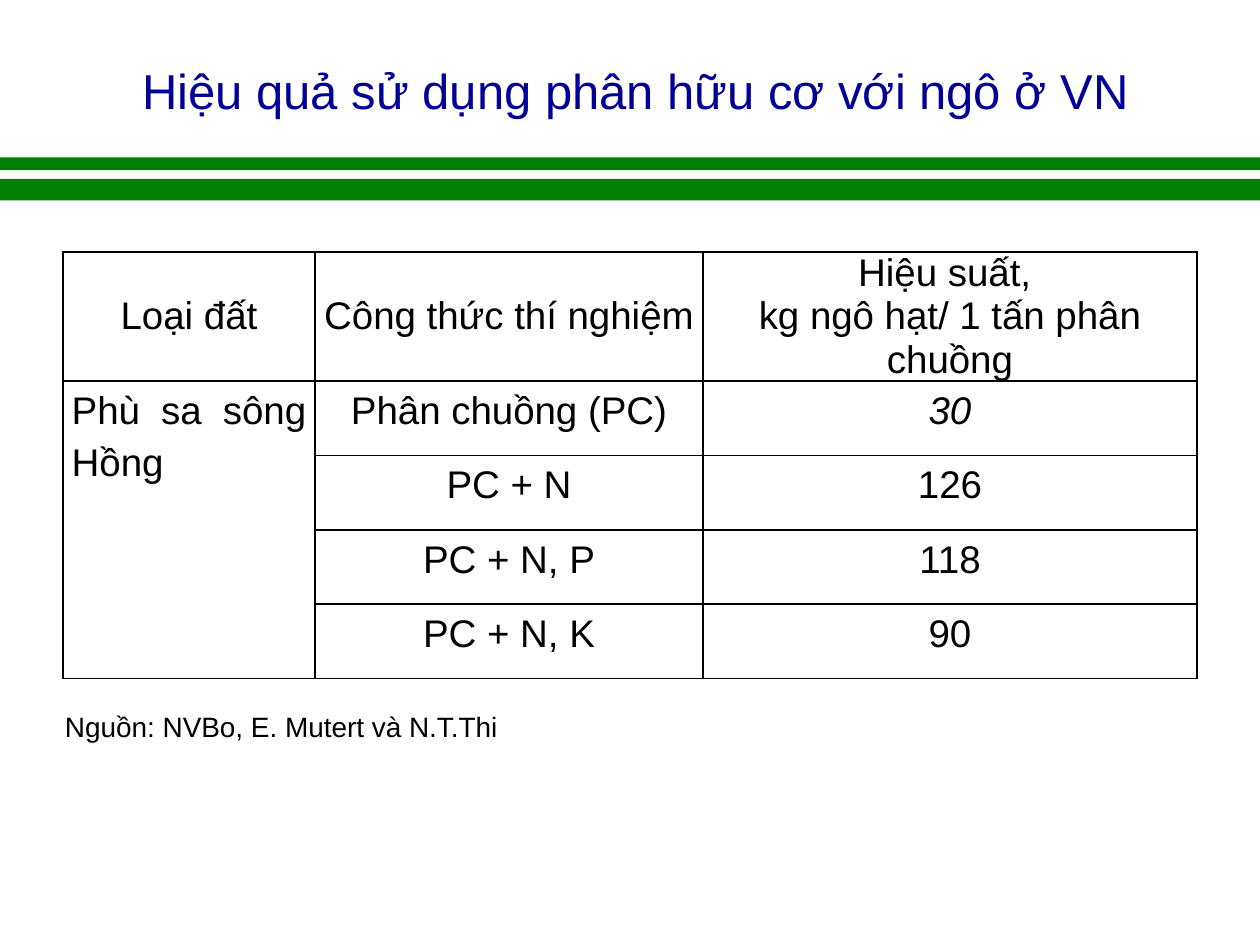
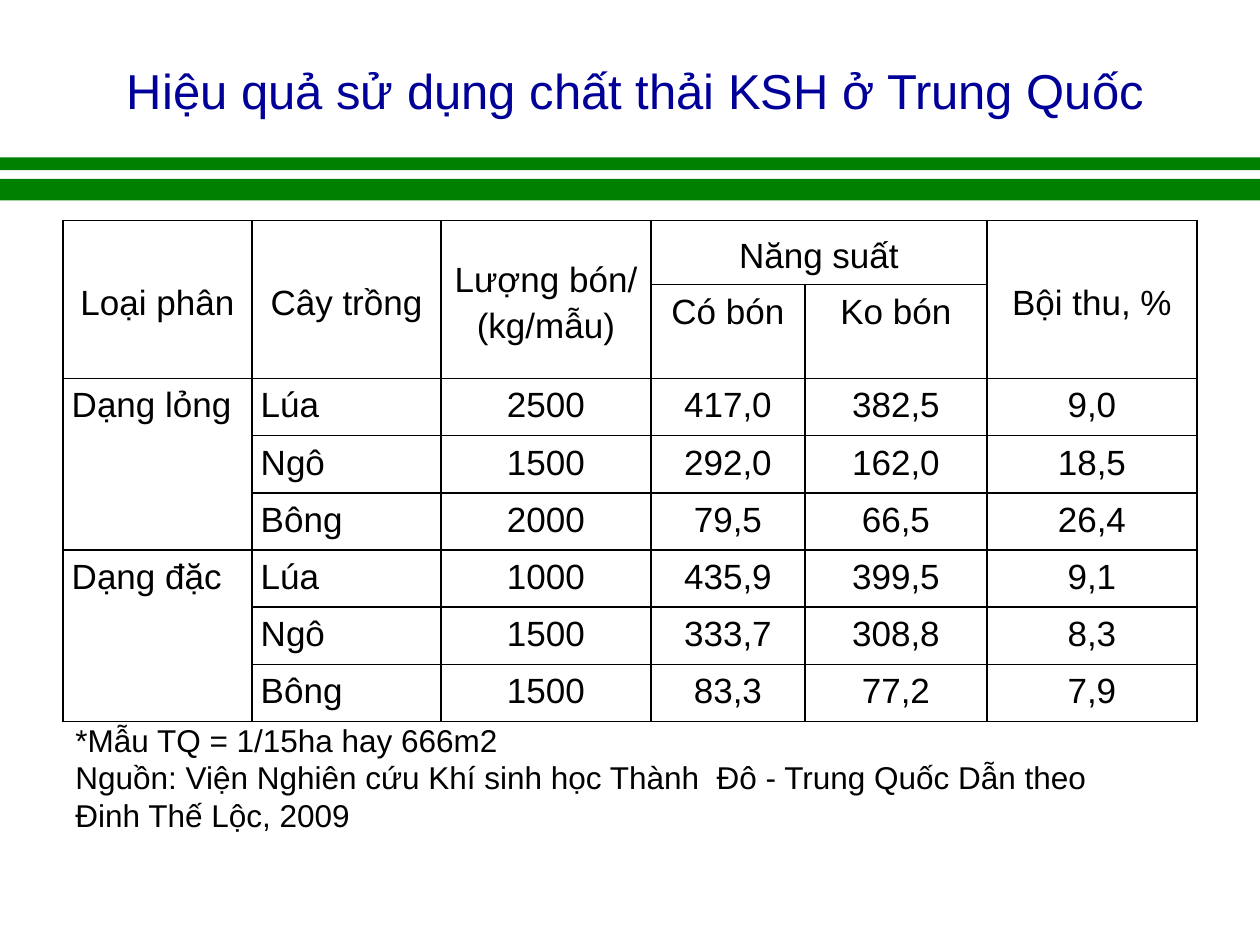
from dataclasses import dataclass

from lxml import etree
from pptx import Presentation
from pptx.dml.color import RGBColor
from pptx.enum.shapes import MSO_SHAPE
from pptx.enum.text import MSO_ANCHOR, MSO_AUTO_SIZE, PP_ALIGN
from pptx.oxml.ns import qn
from pptx.util import Pt

RECTANGLE = MSO_SHAPE.RECTANGLE
TOP, MIDDLE, BOTTOM = MSO_ANCHOR.TOP, MSO_ANCHOR.MIDDLE, MSO_ANCHOR.BOTTOM
LEFT, CENTER, JUSTIFY = PP_ALIGN.LEFT, PP_ALIGN.CENTER, PP_ALIGN.JUSTIFY
FIT_SHAPE = MSO_AUTO_SIZE.SHAPE_TO_FIT_TEXT


@dataclass(frozen=True)
class Theme:
    font: str = "Arial"
    title_color: RGBColor = RGBColor(0x00, 0x00, 0x99)
    text_color: RGBColor = RGBColor(0x00, 0x00, 0x00)
    band_color: RGBColor = RGBColor(0x00, 0x80, 0x00)
    border_color: str = "000000"
    title_size: int = 28


THEME = Theme()
BANDS = [(90, 7.2), (102.24, 12.24)]  # top, height
CELL_MARGINS = {"margin_left": Pt(5), "margin_right": Pt(5), "margin_top": 0, "margin_bottom": 0}
TIGHT = {}
AIRY = {"line_spacing": 1.2, "space_before": Pt(3), "space_after": Pt(3)}

# Merges are (first row, first column, last row, last column).
PAGES = [
    {
        "title": "Hiệu quả sử dụng phân hữu cơ với ngô ở VN",
        "table_top": 144,
        "columns": [144, 221.76, 282.24],
        "row_heights": [66.24] + [42.48] * 4,
        "rows": [
            ["Loại đất", "Công thức thí nghiệm", "Hiệu suất, \nkg ngô hạt/ 1 tấn phân chuồng"],
            ["Phù sa sông Hồng", "Phân chuồng (PC)", "30"],
            [None, "PC + N", "126"],
            [None, "PC + N, P", "118"],
            [None, "PC + N, K", "90"],
        ],
        "merges": [(1, 0, 4, 0)],
        "label_columns": 1,
        "italic_cells": {(1, 2)},
        "heading_format": TIGHT,
        "table_size": 22,
        "note": "Nguồn: NVBo, E. Mutert và N.T.Thi",
        "note_area": (30, 401.76, 306, 26.64),
        "note_size": 16,
    },
    {
        "title": "Hiệu quả sử dụng chất thải KSH ở Trung Quốc",
        "table_top": 126,
        "columns": [108, 108, 120, 88, 104, 120],
        "row_heights": [36.72] * 2 + [32.7] * 6,
        "rows": [
            ["Loại phân", "Cây trồng", "Lượng bón/ (kg/mẫu)", "Năng suất", None, "Bội thu, %"],
            [None, None, None, "Có bón", "Ko bón", None],
            ["Dạng lỏng", "Lúa", "2500", "417,0", "382,5", "9,0"],
            [None, "Ngô", "1500", "292,0", "162,0", "18,5"],
            [None, "Bông", "2000", "79,5", "66,5", "26,4"],
            ["Dạng đặc", "Lúa", "1000", "435,9", "399,5", "9,1"],
            [None, "Ngô", "1500", "333,7", "308,8", "8,3"],
            [None, "Bông", "1500", "83,3", "77,2", "7,9"],
        ],
        "merges": [(0, 0, 1, 0), (0, 1, 1, 1), (0, 2, 1, 2), (0, 3, 0, 4), (0, 5, 1, 5),
                   (2, 0, 4, 0), (5, 0, 7, 0)],
        "label_columns": 2,
        "italic_cells": set(),
        "heading_format": AIRY,
        "table_size": 20,
        "note": "*Mẫu TQ = 1/15ha hay 666m2\n"
                "Nguồn: Viện Nghiên cứu Khí sinh học Thành  Đô - Trung Quốc Dẫn theo Đinh Thế Lộc, 2009",
        "note_area": (36, 408.24, 630, 72.72),
        "note_size": 18,
    },
]


def write_text(frame, text, size, color, alignment, para_format=TIGHT, italic=False):
    """Fill a text frame, one paragraph to a line, all in one style."""
    frame.text = text
    for para in frame.paragraphs:
        for name, value in {"alignment": alignment, **para_format}.items():
            setattr(para, name, value)
        for span in para.runs:
            for name, value in {"name": THEME.font, "size": Pt(size), "italic": italic}.items():
                setattr(span.font, name, value)
            span.font.color.rgb = color


def draw_borders(cell):
    properties = cell._tc.get_or_add_tcPr()
    for side in ("a:lnL", "a:lnR", "a:lnT", "a:lnB"):
        line = etree.SubElement(properties, qn(side), w=str(Pt(1)))
        fill = etree.SubElement(line, qn("a:solidFill"))
        etree.SubElement(fill, qn("a:srgbClr"), val=THEME.border_color)


deck = Presentation()
deck.slide_width, deck.slide_height = Pt(720), Pt(540)
title_only = deck.slide_layouts[5]

for content in PAGES:
    page = deck.slides.add_slide(title_only)

    for top, height in BANDS:
        band = page.shapes.add_shape(RECTANGLE, 0, Pt(top), deck.slide_width, Pt(height))
        band.shadow.inherit = False
        band.fill.solid()
        band.fill.fore_color.rgb = THEME.band_color
        band.line.fill.background()

    title = page.shapes.title
    title.left, title.top, title.width, title.height = Pt(30), Pt(12), Pt(666), Pt(60)
    title.text_frame.vertical_anchor = BOTTOM
    write_text(title.text_frame, content["title"], THEME.title_size, THEME.title_color, CENTER)

    rows, columns, heights = content["rows"], content["columns"], content["row_heights"]
    table = page.shapes.add_table(
        len(rows), len(columns), Pt(36), Pt(content["table_top"]), Pt(sum(columns)), Pt(sum(heights))
    ).table
    table.first_row = table.horz_banding = False
    for column, width in zip(table.columns, columns):
        column.width = Pt(width)
    for row, height in zip(table.rows, heights):
        row.height = Pt(height)
    for first_row, first_column, last_row, last_column in content["merges"]:
        table.cell(first_row, first_column).merge(table.cell(last_row, last_column))

    for row_index, row_texts in enumerate(rows):
        is_heading = row_index == 0
        for column_index, text in enumerate(row_texts):
            cell = table.cell(row_index, column_index)
            draw_borders(cell)
            cell.fill.background()
            for name, value in CELL_MARGINS.items():
                setattr(cell, name, value)
            if text is None:
                continue
            cell.vertical_anchor = MIDDLE if is_heading else TOP
            is_label = not is_heading and column_index < content["label_columns"]
            write_text(
                cell.text_frame, text, content["table_size"], THEME.text_color,
                JUSTIFY if is_label else CENTER,
                content["heading_format"] if is_heading else AIRY,
                (row_index, column_index) in content["italic_cells"],
            )

    note = page.shapes.add_textbox(*(Pt(length) for length in content["note_area"])).text_frame
    note.word_wrap = True
    note.auto_size = FIT_SHAPE
    write_text(note, content["note"], content["note_size"], THEME.text_color, LEFT)

deck.save("out.pptx")
